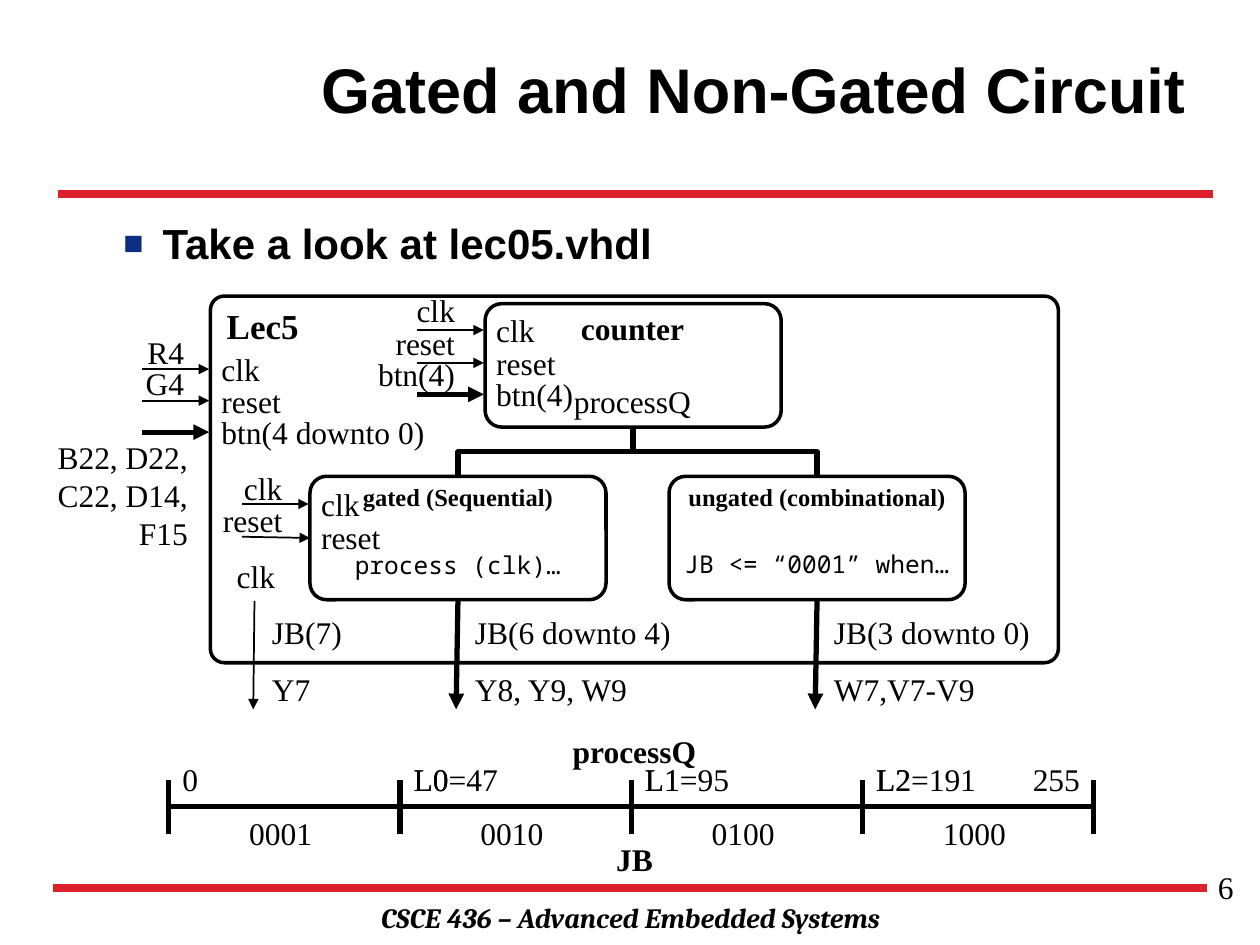
from dataclasses import dataclass
from lxml.etree import SubElement
from pptx import Presentation
from pptx.dml.color import RGBColor as Rgb
from pptx.enum.shapes import MSO_CONNECTOR as Link, MSO_SHAPE as Kind
from pptx.enum.text import MSO_ANCHOR as Anchor, MSO_AUTO_SIZE as Fit, PP_ALIGN as Align
from pptx.oxml.ns import qn
from pptx.util import Emu, Pt

PX = 9144
LEFT, MID, RIGHT = Align.LEFT, Align.CENTER, Align.RIGHT


@dataclass(frozen=True)
class Theme:
    ink: str = "000000"
    red: str = "DD212B"
    blue: str = "0C2D83"
    head: str = "Arial"
    text: str = "Times New Roman"
    code: str = "Noto Sans Mono"
    foot: str = "Cambria"
    title: int = 36
    body: int = 24
    name: int = 20
    base: int = 18
    note: int = 16
    small: int = 14
    thin: float = 1
    edge: float = 2
    bus: float = 3
    rule: float = 4.5


T = Theme()
TITLE = "Gated and Non-Gated Circuit"
BODY = "Take a look at lec05.vhdl"
FOOT = "CSCE 436 – Advanced Embedded Systems"
PAGE = "6"
RULES = [(46, 154, 963, 154), (42, 705, 958, 705)]

BOXES = {
    "lec": (167, 235, 673, 291, 0.038),
    "counter": (385, 241, 235, 98, 0.135),
    "gated": (246, 378, 235, 98, 0.135),
    "ungated": (531, 378, 235, 98, 0.135),
}
LINKS = [("counter", "gated"), ("counter", "ungated")]
BANKS = [
    (166, 34, 10, [(293, "R4", "clk", T.thin), (318, "G4", "reset", T.thin),
                   (343, "", "btn(4 downto 0)", T.bus)]),
    (384, 36, 13, [(262, "clk", "clk", T.thin), (288, "reset", "reset", T.thin),
                   (313, "btn(4)", "btn(4)", T.bus)]),
    (245, 33, 11, [(400, "clk", "clk", T.thin), (426, "reset", "reset", T.thin)]),
]
OUTS = [
    (202, "JB(7)", "Y7", T.thin),
    (363, "JB(6 downto 4)", "Y8, Y9, W9", T.bus),
    (648, "JB(3 downto 0)", "W7,V7-V9", T.bus),
]
NAMES = [
    ("Lec5", 167, 237, 83, 44, dict(size=T.name, bold=True)),
    ("counter", 449, 240, 106, 40, dict(bold=True)),
    ("processQ", 435, 298, 134, 40, {}),
    ("gated (Sequential)", 246, 378, 235, 34, dict(size=T.small, bold=True)),
    ("ungated (combinational)", 531, 378, 235, 34, dict(size=T.small, bold=True)),
    ("process (clk)…", 260, 432, 207, 34, dict(size=T.small, font=T.code)),
    ("JB <= “0001” when…", 518, 431, 261, 34, dict(size=T.small, font=T.code)),
    ("clk", 174, 437, 58, 40, {}),
    ("B22, D22, C22, D14, F15", 18, 343, 141, 101, dict(align=RIGHT)),
]
START, STOP, AXIS = 134, 868, 640
MARKS = [("", "0"), ("L0", "=47"), ("L1", "=95"), ("L2", "=191")]
CODES = ["0001", "0010", "0100", "1000"]
LAST = "255"
HEADS = [("processQ", 576), ("JB", 662)]


def px(*nums):
    return [Emu(round(n * PX)) for n in nums]


def write(frame, text, size=T.base, font=T.text, bold=False, ital=False,
          align=LEFT, anchor=Anchor.TOP):
    frame.word_wrap = True
    frame.auto_size = Fit.NONE
    frame.vertical_anchor = anchor
    para = frame.paragraphs[0]
    para.alignment = align
    para.space_before = Pt(0)
    run = para.add_run()
    run.text = text
    face = run.font
    face.size, face.name, face.bold, face.italic = Pt(size), font, bold, ital
    face.color.rgb = Rgb.from_string(T.ink)


def label(home, text, x, y, w, h=40, **form):
    write(home.add_textbox(*px(x, y, w, h)).text_frame, text, **form)


def block(home, x, y, w, h, curve):
    box = home.add_shape(Kind.ROUNDED_RECTANGLE, *px(x, y, w, h))
    box.adjustments[0] = curve
    box.shadow.inherit = False
    box.fill.background()
    box.line.color.rgb = Rgb.from_string(T.ink)
    box.line.width = Pt(T.edge)
    return box


def wire(home, ends, width, color=T.ink, arrow=False, kind=Link.STRAIGHT):
    link = home.add_connector(kind, *px(*ends))
    link.line.color.rgb = Rgb.from_string(color)
    link.line.width = Pt(width)
    props = link._element.spPr
    if arrow:
        SubElement(props.find(qn("a:ln")), qn("a:tailEnd"), type="triangle")
    SubElement(props, qn("a:effectLst"))
    return link


def dock(link, ends, boxes):
    joins = [(link.begin_connect, ends[:2]), (link.end_connect, ends[2:])]
    for join, (x, y) in joins:
        for key, box in boxes.items():
            l, t, w, h, _ = BOXES[key]
            sides = [(l + w / 2, t), (l, t + h / 2), (l + w / 2, t + h), (l + w, t + h / 2)]
            for site, (a, b) in enumerate(sides):
                if max(abs(a - x), abs(b - y)) <= 1:
                    join(box, site)


def elbow(home, boxes, top, low):
    l, t, w, h, _ = BOXES[top]
    x, y = l + w / 2, t + h
    l, end, w, _, _ = BOXES[low]
    dx, dy = l + w / 2 - x, end - y
    ends = (x, y, x + dx, end)
    link = wire(home, ends, T.bus, kind=Link.ELBOW)
    dock(link, ends, boxes)
    wide = abs(dx)
    link.left, link.top, link.width, link.height = px(
        x + dx / 2 - dy / 2, y + dy / 2 - wide / 2, dy, wide)
    form = link._element.spPr.find(qn("a:xfrm"))
    form.set("rot", str((270 if dx > 0 else 90) * 60000))
    form.set("flipH", "1" if dx > 0 else "0")


def circuit(home):
    boxes = {key: block(home, *spot) for key, spot in BOXES.items()}
    for top, low in LINKS:
        elbow(home, boxes, top, low)
    for x, rise, gap, pins in BANKS:
        for y, outer, inner, width in pins:
            ends = (x - 53, y, x, y)
            dock(wire(home, ends, width, arrow=True), ends, boxes)
            label(home, inner, x, y - 20, 200)
            if outer:
                label(home, outer, x - gap - 95, y - rise, 95, align=RIGHT)
    for x, inner, outer, width in OUTS:
        ends = (x, 477, x - 1, 563)
        dock(wire(home, ends, width, arrow=True), ends, boxes)
        label(home, inner, x + 4, 482, 202)
        label(home, outer, x + 4, 527, 202)
    for text, x, y, w, h, form in NAMES:
        label(home, text, x, y, w, h, **{"align": MID, **form})


def scale(home):
    step = (STOP - START) / len(MARKS)
    wire(home, (START, AXIS, STOP, AXIS), T.bus)
    for i in range(len(MARKS) + 1):
        x = START + i * step
        wire(home, (x, AXIS + 22, x, AXIS - 21), T.bus)
    for i, ((sign, rest), code) in enumerate(zip(MARKS, CODES)):
        x = START + i * step + 1
        if sign:
            label(home, sign, x, 598, 58)
        label(home, sign + rest, x, 598, 103)
        label(home, code, x + 53, 641, 74)
    label(home, LAST, STOP - 59, 598, 58, align=RIGHT)
    for text, y in HEADS:
        label(home, text, 434, y, 139, bold=True, align=MID)


def place(shape, *spot):
    shape.left, shape.top, shape.width, shape.height = px(*spot)
    return shape.text_frame


def main():
    deck = Presentation()
    deck.slide_width, deck.slide_height = px(1000, 750)
    slide = deck.slides.add_slide(deck.slide_layouts[1])
    home = slide.shapes
    for ends in RULES:
        wire(home, ends, T.rule, T.red)
    label(home, FOOT, 142, 710, 717, 37, size=T.note, font=T.foot,
          bold=True, ital=True, align=MID)
    write(place(home.title, 209, 8, 742, 125), TITLE, size=T.title, font=T.head,
          bold=True, align=RIGHT, anchor=Anchor.MIDDLE)
    frame = place(slide.placeholders[1], 88, 168, 889, 473)
    props = frame.paragraphs[0]._p.get_or_add_pPr()
    props.set("marL", str(31 * PX))
    props.set("indent", str(-31 * PX))
    SubElement(SubElement(props, qn("a:buClr")), qn("a:srgbClr"), val=T.blue)
    SubElement(props, qn("a:buSzPct"), val="80000")
    SubElement(props, qn("a:buChar"), char="■")
    write(frame, BODY, size=T.body, font=T.head, bold=True)
    label(home, PAGE, 756, 684, 233, 52, align=RIGHT)
    circuit(home.add_group_shape().shapes)
    scale(home.add_group_shape().shapes)
    deck.save("out.pptx")


if __name__ == "__main__":
    main()
